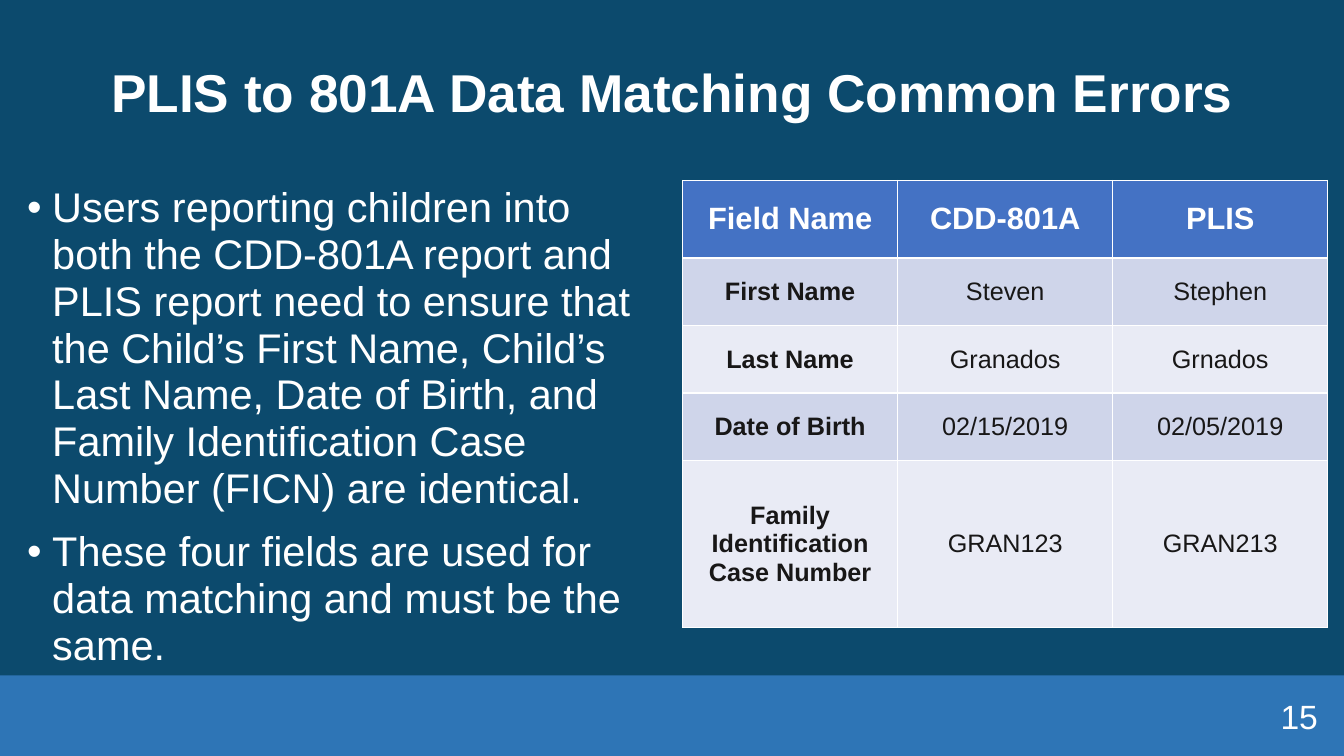
from lxml import etree
from pptx import Presentation
from pptx.dml.color import RGBColor
from pptx.enum import shapes, text
from pptx.oxml import ns
from pptx.util import Inches, Pt

TITLE = "PLIS to 801A Data Matching\u00a0Common Errors"
BULLETS = [
    "Users reporting children into both the CDD-801A report and PLIS report need to ensure that "
    "the Child’s First Name, Child’s Last Name, Date of Birth, and Family Identification Case "
    "Number (FICN) are identical.",
    "These four fields are used for data matching and must be the same.",
]
ROWS = [
    ("Field Name", "CDD-801A", "PLIS"),
    ("First Name", "Steven", "Stephen"),
    ("Last Name", "Granados", "Grnados"),
    ("Date of Birth", "02/15/2019", "02/05/2019"),
    ("Family Identification Case Number", "GRAN123", "GRAN213"),
]
ROW_HEIGHTS = [0.77, 0.67, 0.67, 0.67, 1.66]
PAGE_NUMBER = "15"
WIDTH, HEIGHT, FOOTER_HEIGHT = 13.33, 7.5, 0.8
MARGIN, CONTENT_TOP, COLUMN_WIDTH = 0.17, 1.79, 6.4
NAVY, BLUE, HEADER = "0C4A6D", "2E75B6", "4472C4"
BANDS = ["E9EBF5", "CFD5EA"]
WHITE, INK = "FFFFFF", "181717"
CENTER = text.PP_ALIGN.CENTER
MIDDLE = text.MSO_ANCHOR.MIDDLE


def paint(fill, color):
    fill.solid()
    fill.fore_color.rgb = RGBColor.from_string(color)


def style(paragraph, size, color=WHITE, bold=False, align=None):
    paragraph.alignment = align
    font = paragraph.font
    font.name, font.size, font.bold = "Arial", Pt(size), bold
    font.color.rgb = RGBColor.from_string(color)


def add_text(slide, box, lines, size, anchor=MIDDLE, **look):
    frame = slide.shapes.add_textbox(*map(Inches, box)).text_frame
    frame.word_wrap = True
    frame.vertical_anchor = anchor
    frame.text = "\n".join(lines)
    for paragraph in frame.paragraphs:
        style(paragraph, size, **look)
    return frame.paragraphs


def add_bullet(paragraph):
    properties = paragraph._p.get_or_add_pPr()
    properties.set("marL", str(Inches(0.25)))
    properties.set("indent", str(-Inches(0.25)))
    etree.SubElement(properties, ns.qn("a:buFont"), typeface="Arial")
    etree.SubElement(properties, ns.qn("a:buChar"), char="•")


def add_borders(cell):
    properties = cell._tc.get_or_add_tcPr()
    for index, side in enumerate(("lnL", "lnR", "lnT", "lnB")):
        line = etree.Element(ns.qn(f"a:{side}"), w=str(Pt(1)))
        fill = etree.SubElement(line, ns.qn("a:solidFill"))
        etree.SubElement(fill, ns.qn("a:srgbClr"), val=WHITE)
        properties.insert(index, line)


def add_comparison(slide):
    left = WIDTH - 0.16 - COLUMN_WIDTH
    table = slide.shapes.add_table(
        len(ROWS), len(ROWS[0]), Inches(left), Inches(CONTENT_TOP),
        Inches(COLUMN_WIDTH), Inches(sum(ROW_HEIGHTS))).table
    for column in table.columns:
        column.width = Inches(COLUMN_WIDTH / len(ROWS[0]))
    for r, (height, values) in enumerate(zip(ROW_HEIGHTS, ROWS)):
        table.rows[r].height = Inches(height)
        for c, value in enumerate(values):
            cell = table.cell(r, c)
            cell.text = value
            cell.vertical_anchor = MIDDLE
            paint(cell.fill, BANDS[r % 2] if r else HEADER)
            add_borders(cell)
            style(cell.text_frame.paragraphs[0], 18 if r else 22,
                  INK if r else WHITE, r == 0 or c == 0, CENTER)


def main():
    presentation = Presentation()
    presentation.slide_width, presentation.slide_height = Inches(WIDTH), Inches(HEIGHT)
    slide = presentation.slides.add_slide(presentation.slide_layouts[6])
    paint(slide.background.fill, NAVY)

    footer = slide.shapes.add_shape(
        shapes.MSO_SHAPE.RECTANGLE, 0, Inches(HEIGHT - FOOTER_HEIGHT),
        Inches(WIDTH), Inches(FOOTER_HEIGHT))
    footer.shadow.inherit = False
    paint(footer.fill, BLUE)
    footer.line.fill.background()

    title = add_text(slide, (MARGIN, 0.22, 13, 1.45), [TITLE], 38, bold=True, align=CENTER)
    title[0].line_spacing = 0.9

    body = (MARGIN, CONTENT_TOP, COLUMN_WIDTH, 4.82)
    for paragraph in add_text(slide, body, BULLETS, 29.6, text.MSO_ANCHOR.TOP):
        paragraph.line_spacing = 0.94
        paragraph.space_after = Pt(12)
        add_bullet(paragraph)

    add_comparison(slide)
    add_text(slide, (10.17, 6.9, 3, 0.4), [PAGE_NUMBER], 24, align=text.PP_ALIGN.RIGHT)
    presentation.save("out.pptx")


if __name__ == "__main__":
    main()
